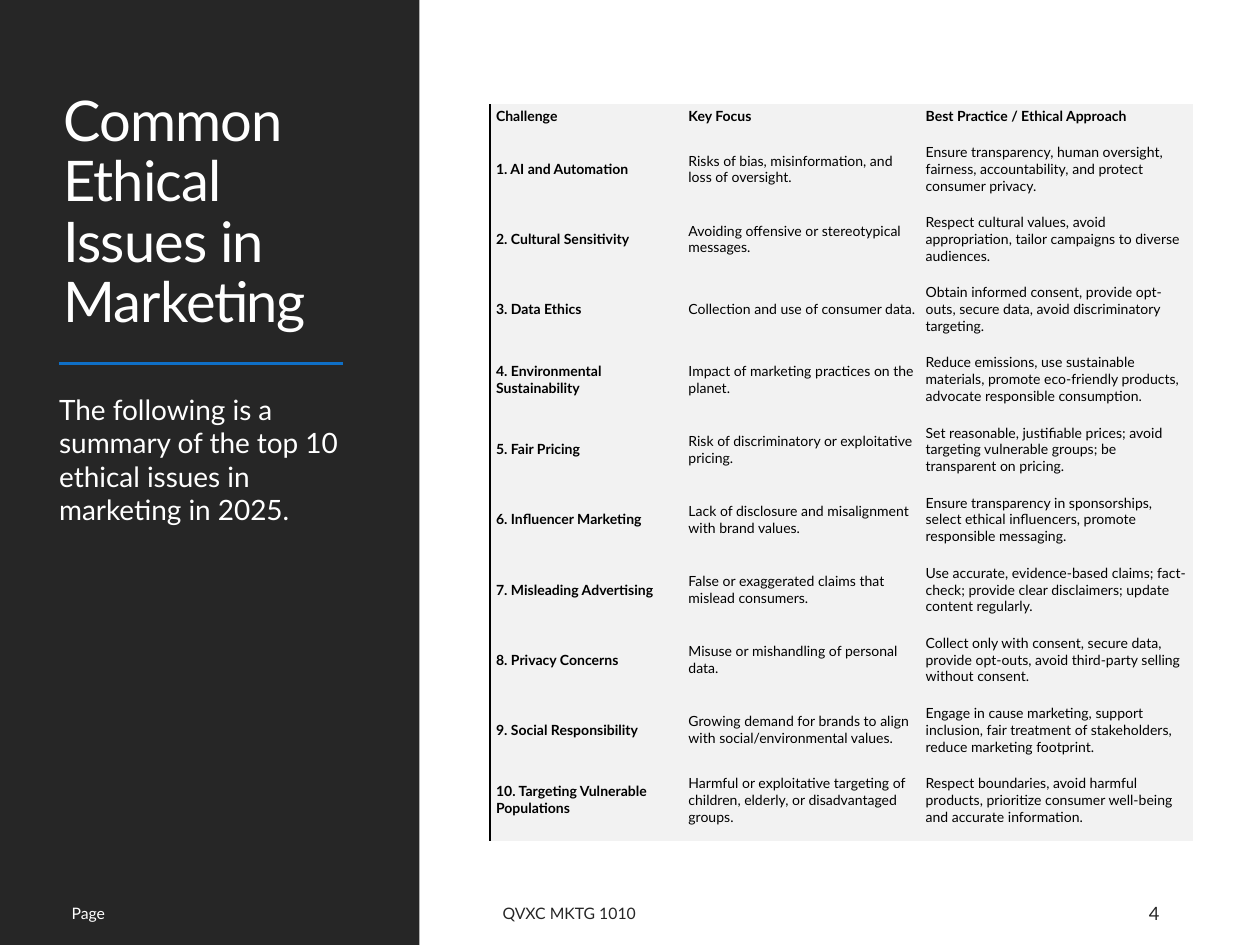
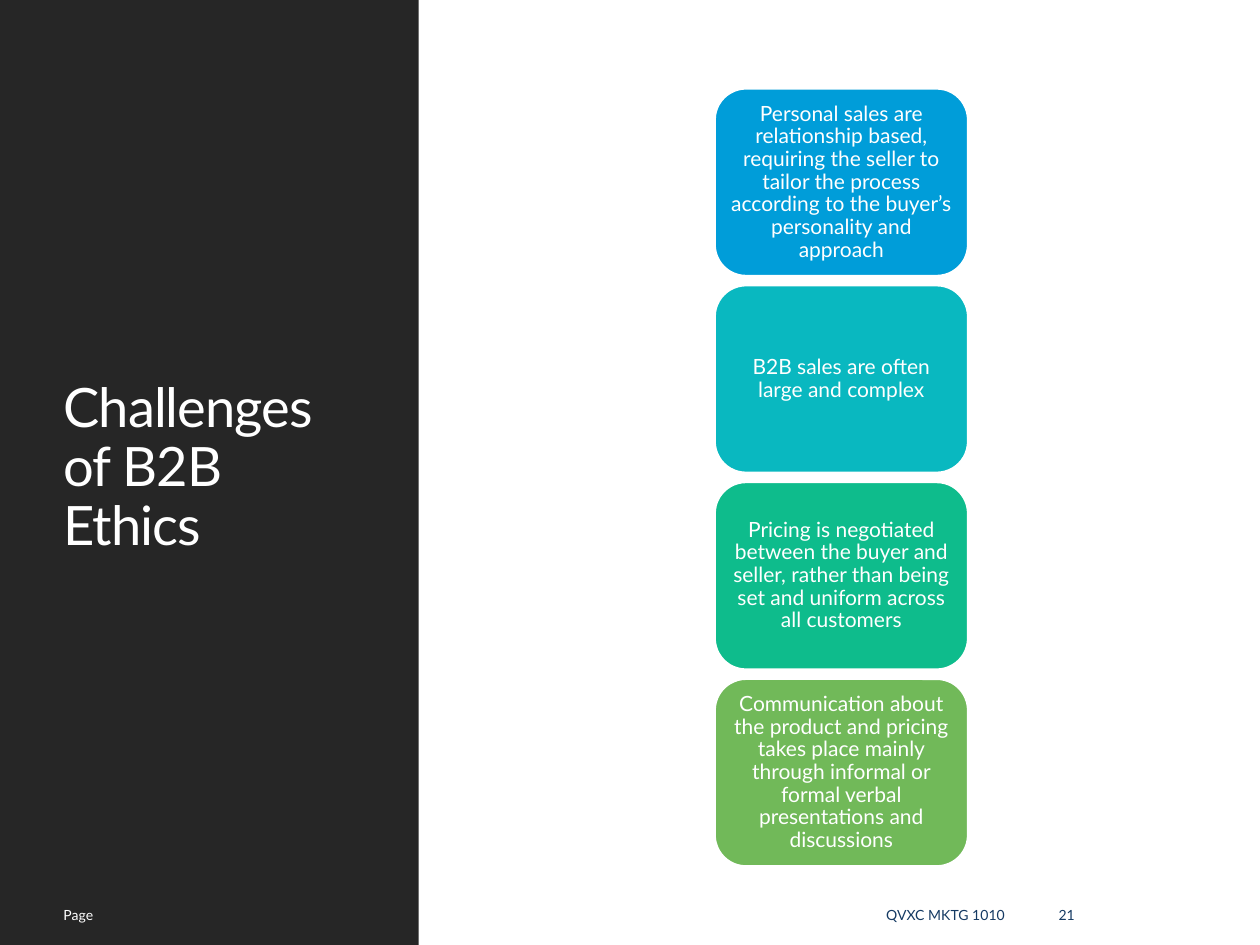
from dataclasses import dataclass

from lxml.etree import SubElement
from pptx import Presentation
from pptx.dml.color import RGBColor as Rgb
from pptx.enum.shapes import MSO_CONNECTOR as Connector, MSO_SHAPE as Preset
from pptx.enum.text import MSO_ANCHOR as Anchor, PP_ALIGN as Align
from pptx.oxml.ns import qn
from pptx.util import Inches, Pt

SLIDE_W, SLIDE_H = Inches(10), Inches(7.5)


@dataclass(frozen=True)
class Theme:
    font: str = "Lato"
    dark: str = "262626"
    white: str = "FFFFFF"
    black: str = "000000"
    navy: str = "153A63"
    accent: str = "0F6FC6"
    table_fill: str = "F2F2F2"
    cards: tuple = ("009DD9", "09B8C0", "0EBC8C", "71B959")
    issues_title: float = 32
    b2b_title: float = 31
    summary: float = 16
    card: float = 12
    number: float = 10.5
    footer: float = 9
    small: float = 8


THEME = Theme()
PLAIN_TABLE = "{2D5ABB26-0587-4C30-8999-92F81FD0307C}"
COURSE = "QVXC MKTG 1010"

ISSUES = [
    ("Challenge", "Key Focus", "Best Practice / Ethical Approach"),
    ("1. AI and Automation",
     "Risks of bias, misinformation, and loss of oversight.",
     "Ensure transparency, human oversight, fairness, accountability, and protect consumer privacy."),
    ("2. Cultural Sensitivity",
     "Avoiding offensive or stereotypical messages.",
     "Respect cultural values, avoid appropriation, tailor campaigns to diverse audiences."),
    ("3. Data Ethics",
     "Collection and use of consumer data.",
     "Obtain informed consent, provide opt-outs, secure data, avoid discriminatory targeting."),
    ("4. Environmental Sustainability",
     "Impact of marketing practices on the planet.",
     "Reduce emissions, use sustainable materials, promote eco-friendly products, "
     "advocate responsible consumption."),
    ("5. Fair Pricing",
     "Risk of discriminatory or exploitative pricing.",
     "Set reasonable, justifiable prices; avoid targeting vulnerable groups; be transparent on pricing."),
    ("6. Influencer Marketing",
     "Lack of disclosure and misalignment with brand values.",
     "Ensure transparency in sponsorships, select ethical influencers, promote responsible messaging."),
    ("7. Misleading Advertising",
     "False or exaggerated claims that mislead consumers.",
     "Use accurate, evidence-based claims; fact-check; provide clear disclaimers; "
     "update content regularly."),
    ("8. Privacy Concerns",
     "Misuse or mishandling of personal data.",
     "Collect only with consent, secure data, provide opt-outs, avoid third-party selling without consent."),
    ("9. Social Responsibility",
     "Growing demand for brands to align with social/environmental values.",
     "Engage in cause marketing, support inclusion, fair treatment of stakeholders, "
     "reduce marketing footprint."),
    ("10. Targeting Vulnerable Populations",
     "Harmful or exploitative targeting of children, elderly, or disadvantaged groups.",
     "Respect boundaries, avoid harmful products, prioritize consumer well-being and accurate information."),
]

CHALLENGES = [
    "Personal sales are relationship based, requiring the seller to tailor the process "
    "according to the buyer’s personality and approach",
    "B2B sales are often large and complex",
    "Pricing is negotiated between the buyer and seller, rather than being set and uniform "
    "across all customers",
    "Communication about the product and pricing takes place mainly through informal or "
    "formal verbal presentations and discussions",
]


def across(percent):
    return round(SLIDE_W * percent / 100)


def down(percent):
    return round(SLIDE_H * percent / 100)


def area(left, top, width, height):
    return across(left), down(top), across(width), down(height)


def apply(target, formats):
    for attribute, value in formats.items():
        setattr(target, attribute, value)


def write(frame, text, size, color, bold=False, tracking=None, **paragraph_format):
    paragraph = frame.paragraphs[0]
    apply(paragraph, paragraph_format)
    run = paragraph.add_run()
    run.text = text
    apply(run.font, {"name": THEME.font, "size": Pt(size), "bold": bold})
    run.font.color.rgb = Rgb.from_string(color)
    if tracking:
        run.font._element.set("spc", str(round(tracking * 100)))


def set_insets(target, left, top, right, bottom):
    apply(target, {"margin_left": Inches(left), "margin_top": Inches(top),
                   "margin_right": Inches(right), "margin_bottom": Inches(bottom)})


def add_text(slide, place, text, size, color, anchor=Anchor.MIDDLE, insets=None, **formats):
    frame = slide.shapes.add_textbox(*area(*place)).text_frame
    apply(frame, {"word_wrap": True, "vertical_anchor": anchor})
    if insets:
        set_insets(frame, *insets)
    write(frame, text, size, color, **formats)


def add_block(slide, preset, place, fill):
    block = slide.shapes.add_shape(preset, *area(*place))
    block.shadow.inherit = False
    block.fill.solid()
    block.fill.fore_color.rgb = Rgb.from_string(fill)
    block.line.fill.background()
    return block


def add_side_panel(slide, width, title, title_top, title_height, size, anchor):
    add_block(slide, Preset.RECTANGLE, (0, 0, width, 100), THEME.dark)
    add_text(slide, (4.05, title_top, 25.3, title_height), title, size, THEME.white,
             anchor, line_spacing=0.9, tracking=-0.5)


def add_footer(slide, top, entries):
    for left, width, text, size, color, align in entries:
        add_text(slide, (left, top, width, 5.33), text, size, color,
                 alignment=align, space_after=Pt(6))


def add_rule(slide, left, right, top):
    rule = slide.shapes.add_connector(
        Connector.STRAIGHT, across(left), down(top), across(right), down(top))
    rule.line.color.rgb = Rgb.from_string(THEME.accent)
    rule.line.width = Pt(1.5)
    SubElement(rule._element.spPr, qn("a:effectLst"))


def add_left_border(cell, color, points):
    properties = cell._tc.get_or_add_tcPr()
    border = SubElement(properties, qn("a:lnL"), w=str(Pt(points)))
    SubElement(SubElement(border, qn("a:solidFill")), qn("a:srgbClr"), val=color)
    properties.insert(0, border)


def add_issue_table(slide, left, top, columns, header_height, row_height):
    heights = [header_height] + [row_height] * (len(ISSUES) - 1)
    graphic = slide.shapes.add_table(
        len(ISSUES), len(columns), *area(left, top, sum(columns), sum(heights)))
    table = graphic.table
    apply(table, {"first_row": False, "horz_banding": False})
    table._tbl.tblPr.find(qn("a:tableStyleId")).text = PLAIN_TABLE
    for column, width in zip(table.columns, columns):
        column.width = across(width)
    for row, height in zip(table.rows, heights):
        row.height = down(height)
    for r, issue in enumerate(ISSUES):
        for c, text in enumerate(issue):
            cell = table.cell(r, c)
            cell.vertical_anchor = Anchor.MIDDLE
            set_insets(cell, 0.05, 0.01, 0.02, 0.1)
            cell.fill.solid()
            cell.fill.fore_color.rgb = Rgb.from_string(THEME.table_fill)
            write(cell.text_frame, text, THEME.small, THEME.black, bold=r == 0 or c == 0)
            if c == 0:
                add_left_border(cell, THEME.black, 1)


def add_challenge_cards(slide, left, top, width, height, gap):
    card_height = (height - gap * (len(CHALLENGES) - 1)) / len(CHALLENGES)
    for i, (text, color) in enumerate(zip(CHALLENGES, THEME.cards)):
        place = (left, top + i * (card_height + gap), width, card_height)
        card = add_block(slide, Preset.ROUNDED_RECTANGLE, place, color)
        card.line.color.rgb = Rgb.from_string(THEME.white)
        card.line.width = Pt(1.25)
        apply(card.text_frame, {"word_wrap": True, "vertical_anchor": Anchor.MIDDLE})
        set_insets(card.text_frame, 0.05, 0.03, 0.05, 0.03)
        write(card.text_frame, text, THEME.card, THEME.white,
              alignment=Align.CENTER, line_spacing=0.9)


def build_issues(slide):
    add_side_panel(slide, 33.3, "Common Ethical Issues in Marketing", 7.55, 28.53,
                   THEME.issues_title, Anchor.BOTTOM)
    add_rule(slide, 4.7, 27.2, 38.5)
    add_text(slide, (4.7, 40.85, 24.7, 46.53),
             "The following is a summary of the top 10 ethical issues in marketing in 2025.",
             THEME.summary, THEME.white, Anchor.TOP, (0, 0.05, 0, 0.05), space_after=Pt(6))
    add_footer(slide, 94, [
        (4.7, 24.7, "Page", THEME.footer, THEME.white, Align.LEFT),
        (38.9, 48.7, COURSE, THEME.footer, THEME.dark, Align.LEFT),
        (90.2, 6.4, "4", THEME.number, THEME.dark, Align.LEFT),
    ])
    add_issue_table(slide, 38.87, 11.05, (15.27, 18.83, 21.7), 3.73, 7.42)


def build_b2b(slide):
    add_side_panel(slide, 33.23, "Challenges of B2B Ethics", 7.55, 84.13,
                   THEME.b2b_title, Anchor.MIDDLE)
    add_footer(slide, 94.13, [
        (4.05, 14.2, "Page", THEME.small, THEME.white, Align.LEFT),
        (38.9, 41.85, COURSE, THEME.small, THEME.navy, Align.RIGHT),
        (83.03, 8.9, "21", THEME.small, THEME.navy, Align.LEFT),
    ])
    add_challenge_cards(slide, 56.73, 9.37, 20.1, 82.3, 1)


def main():
    deck = Presentation()
    apply(deck, {"slide_width": SLIDE_W, "slide_height": SLIDE_H})
    for build in (build_issues, build_b2b):
        build(deck.slides.add_slide(deck.slide_layouts[6]))
    deck.save("out.pptx")


if __name__ == "__main__":
    main()
